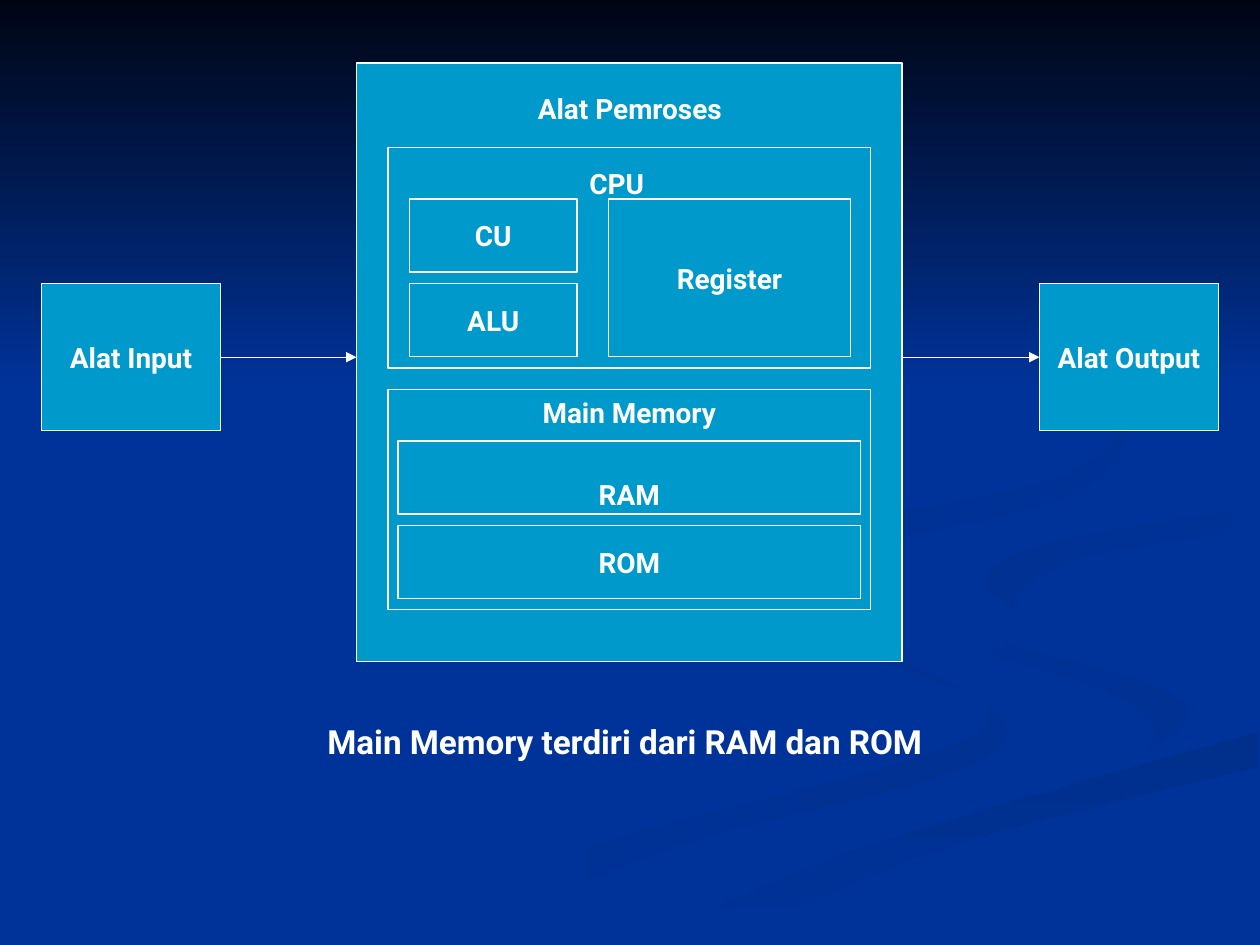
from dataclasses import dataclass

from lxml.etree import SubElement
from pptx import Presentation
from pptx.dml.color import RGBColor
from pptx.enum.shapes import MSO_CONNECTOR, MSO_SHAPE
from pptx.enum.text import MSO_ANCHOR, PP_ALIGN
from pptx.oxml.ns import qn
from pptx.util import Inches, Pt

NAVY = RGBColor(0x00, 0x33, 0x99)
NIGHT = RGBColor(0x00, 0x05, 0x14)
SHADE = RGBColor(0x00, 0x31, 0x93)
DEEP_SHADE = RGBColor(0x00, 0x2F, 0x8C)
CYAN = RGBColor(0x00, 0x99, 0xCC)
WHITE = RGBColor(0xFF, 0xFF, 0xFF)
FONT = "Roboto"
LINE_WIDTH = Pt(0.75)
LABEL_SIZE = 16
CAPTION_SIZE = 19
CURVE_STEPS = 6

Point = tuple[float, float]


@dataclass
class Ribbon:
    """Background swoosh between two smooth edges, in inches."""
    outer: list[Point]
    inner: list[Point]
    start: RGBColor
    end: RGBColor
    angle: int  # clockwise degrees


@dataclass
class Box:
    left: float
    top: float
    width: float
    height: float
    text: str = ""
    anchor: MSO_ANCHOR = MSO_ANCHOR.MIDDLE
    bottom_inset: float = 0.05


@dataclass
class Label(Box):
    size: int = LABEL_SIZE
    wrap: bool = False


# Background: flowing ribbons and the dark band at the top
RIBBONS = [
    Ribbon([(5.75, 4.59), (6.14, 4.96), (7.45, 5.38), (8, 5.81), (7.4, 6.18), (5.32, 6.74), (3.61, 7.49)],
           [(3, 7.49), (4.58, 6.74), (7.27, 6.02), (7.86, 5.66), (7.28, 5.35), (5.93, 4.91), (5.75, 4.59)],
           NAVY, SHADE, 0),
    Ribbon([(7.24, 4.64), (7.58, 4.98), (9.05, 5.4), (9.43, 5.7), (8.94, 6.05)],
           [(8.94, 6.05), (9.18, 5.81), (8.8, 5.49), (7.66, 5.12), (7.24, 4.64)],
           NAVY, SHADE, 45),
    Ribbon([(5.03, 7.49), (6.96, 6.69), (9.98, 5.81)],
           [(9.98, 6.09), (7.52, 6.72), (5.71, 7.49)],
           DEEP_SHADE, NAVY, 90),
    Ribbon([(8.26, 4.96), (7.81, 4.6), (8.35, 4.3), (9.98, 4.02)],
           [(9.98, 4.2), (8.59, 4.43), (8.05, 4.74), (8.26, 4.96)],
           SHADE, NAVY, 45),
    Ribbon([(7.62, 2.33), (8.64, 2.91), (8.92, 3.54), (8.25, 4.02), (6.24, 4.44), (5.94, 4.75), (6.22, 5)],
           [(6.22, 5), (5.77, 4.62), (6.25, 4.26), (8.3, 3.82), (8.89, 3.35), (8.46, 2.79), (7.62, 2.33)],
           DEEP_SHADE, NAVY, 45),
]
TOP_BAND = Box(0, 0, 10, 3.08)

# Diagram boxes
PROCESSOR = Box(2.83, 0.5, 4.33, 4.75)
INPUT, OUTPUT = (Box(left, 2.25, 1.42, 1.17, text)
                 for left, text in ((0.33, "Alat Input"), (8.25, "Alat Output")))
INNER_BOXES = [
    Box(3.08, 1.17, 3.83, 1.75),
    Box(3.08, 3.09, 3.83, 1.75, "Main Memory", MSO_ANCHOR.TOP),
    Box(3.25, 1.58, 1.33, 0.58, "CU"),
    Box(3.25, 2.25, 1.33, 0.58, "ALU"),
    Box(4.83, 1.58, 1.92, 1.25, "Register"),
    Box(3.16, 3.5, 3.67, 0.58, "RAM", MSO_ANCHOR.BOTTOM, 0.02),
    Box(3.16, 4.17, 3.67, 0.58, "ROM"),
]
LABELS = [
    Label(4.58, 1, 0.83, 0.7, "CPU", MSO_ANCHOR.BOTTOM, 0.11, wrap=True),
    Label(4.17, 0.66, 1.72, 0.4, "Alat Pemroses"),
    Label(2.5, 5.66, 5.08, 0.45, "Main Memory terdiri dari RAM dan ROM", size=CAPTION_SIZE),
]


def frame_of(box: Box) -> list:
    return [Inches(value) for value in (box.left, box.top, box.width, box.height)]


def smooth_edge(points: list[Point]) -> list[Point]:
    """Run a Catmull-Rom curve through the points."""
    padded = [points[0], *points, points[-1]]
    curve = []
    for a, b, c, d in zip(padded, padded[1:], padded[2:], padded[3:]):
        for step in range(CURVE_STEPS):
            t = step / CURVE_STEPS
            curve.append(tuple(
                q + ((r - p) * t + (2 * p - 5 * q + 4 * r - s) * t**2
                     + (3 * q - p - 3 * r + s) * t**3) / 2
                for p, q, r, s in zip(a, b, c, d)))
    return [*curve, points[-1]]


def fill_gradient(shape, start: RGBColor, end: RGBColor, angle: int) -> None:
    shape.shadow.inherit = False
    shape.line.fill.background()
    shape.fill.gradient()
    shape.fill.gradient_angle = (360 - angle) % 360
    for stop, color in zip(shape.fill.gradient_stops, (start, end)):
        stop.color.rgb = color


def draw_ribbon(slide, ribbon: Ribbon) -> None:
    outline = smooth_edge(ribbon.outer) + smooth_edge(ribbon.inner)
    first, *rest = [(Inches(x), Inches(y)) for x, y in outline]
    builder = slide.shapes.build_freeform(*first)
    builder.add_line_segments(rest, close=True)
    fill_gradient(builder.convert_to_shape(), ribbon.start, ribbon.end, ribbon.angle)


def write_text(shape, box: Box, size: int, alignment: PP_ALIGN, wrap: bool = False) -> None:
    frame_format = {"word_wrap": wrap, "vertical_anchor": box.anchor,
                    "margin_bottom": Inches(box.bottom_inset)}
    for name, value in frame_format.items():
        setattr(shape.text_frame, name, value)
    paragraph = shape.text_frame.paragraphs[0]
    paragraph.alignment = alignment
    run = paragraph.add_run()
    run.text = box.text
    for name, value in {"name": FONT, "size": Pt(size), "bold": True}.items():
        setattr(run.font, name, value)
    run.font.color.rgb = WHITE


def draw_box(slide, box: Box):
    shape = slide.shapes.add_shape(MSO_SHAPE.RECTANGLE, *frame_of(box))
    shape.shadow.inherit = False
    shape.fill.solid()
    shape.fill.fore_color.rgb = CYAN
    shape.line.color.rgb = WHITE
    shape.line.width = LINE_WIDTH
    if box.text:
        write_text(shape, box, LABEL_SIZE, PP_ALIGN.CENTER)
    return shape


def draw_label(slide, label: Label) -> None:
    shape = slide.shapes.add_textbox(*frame_of(label))
    write_text(shape, label, label.size, PP_ALIGN.LEFT, label.wrap)


def draw_arrow(slide, start: float, end: float, height: float):
    connector = slide.shapes.add_connector(
        MSO_CONNECTOR.STRAIGHT, Inches(start), Inches(height), Inches(end), Inches(height))
    connector.line.color.rgb = WHITE
    connector.line.width = LINE_WIDTH
    SubElement(connector.line._get_or_add_ln(), qn("a:tailEnd"), type="triangle")
    SubElement(connector._element.spPr, qn("a:effectLst"))
    return connector


def main() -> None:
    presentation = Presentation()
    presentation.slide_width, presentation.slide_height = Inches(10), Inches(7.5)
    slide = presentation.slides.add_slide(presentation.slide_layouts[6])
    slide.background.fill.solid()
    slide.background.fill.fore_color.rgb = NAVY

    for ribbon in RIBBONS:
        draw_ribbon(slide, ribbon)
    band = slide.shapes.add_shape(MSO_SHAPE.RECTANGLE, *frame_of(TOP_BAND))
    fill_gradient(band, NIGHT, NAVY, 90)

    draw_box(slide, PROCESSOR)
    input_shape, output_shape = draw_box(slide, INPUT), draw_box(slide, OUTPUT)
    for box in INNER_BOXES:
        draw_box(slide, box)

    # Data flow: input to processor to output
    middle = INPUT.top + INPUT.height / 2
    draw_arrow(slide, INPUT.left + INPUT.width, PROCESSOR.left, middle).begin_connect(input_shape, 3)
    draw_arrow(slide, PROCESSOR.left + PROCESSOR.width, OUTPUT.left, middle).end_connect(output_shape, 1)

    for label in LABELS:
        draw_label(slide, label)
    presentation.save("out.pptx")


if __name__ == "__main__":
    main()
